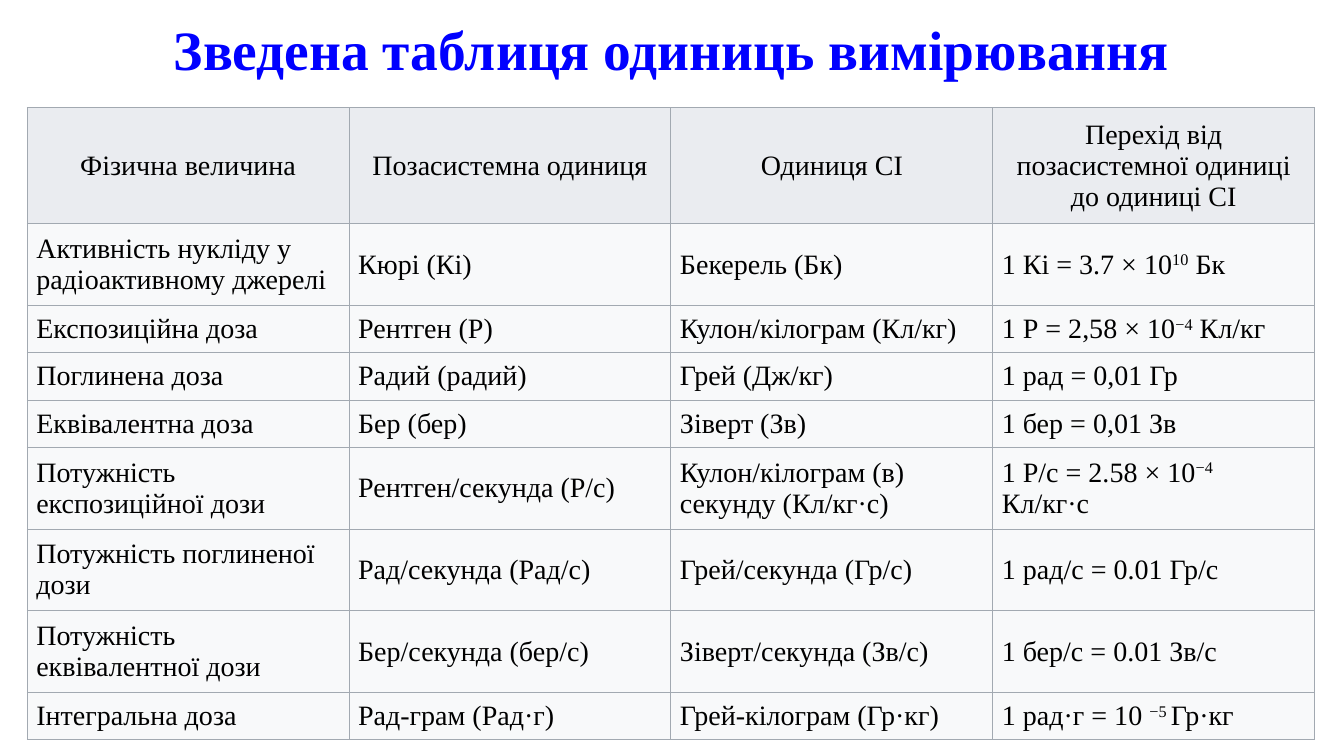
from lxml.etree import SubElement
from pptx import Presentation
from pptx.dml.color import RGBColor
from pptx.enum.text import MSO_ANCHOR as Anchor, PP_ALIGN as Align
from pptx.oxml.ns import qn
from pptx.util import Inches, Pt

TITLE = "Зведена таблиця одиниць вимірювання"
HEADER = ["Фізична величина", "Позасистемна одиниця", "Одиниця СІ",
          "Перехід від позасистемної одиниці до одиниці СІ"]
UNITS = [
    ["Активність нукліду у радіоактивному джерелі", "Кюрі (Кі)",
     "Бекерель (Бк)", "1 Кі = 3.7 × 10^10^ Бк"],
    ["Експозиційна доза", "Рентген (Р)",
     "Кулон/кілограм (Кл/кг)", "1 Р = 2,58 × 10^−4^ Кл/кг"],
    ["Поглинена доза", "Радий (радий)", "Грей (Дж/кг)", "1 рад = 0,01 Гр"],
    ["Еквівалентна доза", "Бер (бер)", "Зіверт (Зв)", "1 бер = 0,01 Зв"],
    ["Потужність експозиційної дози", "Рентген/секунда (Р/с)",
     "Кулон/кілограм (в) секунду (Кл/кг·с)", "1 Р/c = 2.58 × 10^−4^ Кл/кг·с"],
    ["Потужність поглиненої дози", "Рад/секунда (Рад/с)",
     "Грей/секунда (Гр/с)", "1 рад/с = 0.01 Гр/c"],
    ["Потужність еквівалентної дози", "Бер/секунда (бер/с)",
     "Зіверт/секунда (Зв/с)", "1 бер/c = 0.01 Зв/с"],
    ["Інтегральна доза", "Рад-грам (Рад·г)",
     "Грей-кілограм (Гр·кг)", "1 рад·г = 10 ^−5 ^Гр·кг"],
]
ROWS = [HEADER] + UNITS
ROW_LINES = [3, 2, 1, 1, 1, 2, 2, 2, 1]
LINE_H, ROW_PAD = 0.34, 0.13
LEFT, TOP, WIDTH = 0.27, 1.07, 12.77
FONT = "Times New Roman"
MARGINS = {"margin_left": Inches(0.09), "margin_right": Inches(0.09),
           "margin_top": Inches(0.04), "margin_bottom": Inches(0.04)}
TITLE_FONT = {"name": FONT, "size": Pt(39.6), "bold": True}
CELL_FONT = {"name": FONT, "size": Pt(20), "bold": False}


def rgb(value):
    return RGBColor.from_string(value)


def assign(target, values):
    for name, value in values.items():
        setattr(target, name, value)


def write(p, text, font, color):
    for i, part in enumerate(text.split("^")):
        r = p.add_run()
        r.text = part
        assign(r.font, font)
        r.font.color.rgb = rgb(color)
        if i % 2:
            r.font._element.set("baseline", "30000")


def add_borders(cell, color, width):
    tc_pr = cell._tc.get_or_add_tcPr()
    for i, side in enumerate(["lnL", "lnR", "lnT", "lnB"]):
        ln = SubElement(tc_pr, qn("a:" + side), w=str(Pt(width)))
        fill = SubElement(ln, qn("a:solidFill"))
        SubElement(fill, qn("a:srgbClr"), val=color)
        tc_pr.insert(i, ln)


def add_title(s):
    box = s.shapes.add_textbox(Inches(0.91), Inches(0.19), Inches(11.5), Inches(0.67))
    tf = box.text_frame
    assign(tf, {"word_wrap": True, "vertical_anchor": Anchor.MIDDLE, **MARGINS})
    p = tf.paragraphs[0]
    assign(p, {"alignment": Align.CENTER, "line_spacing": 0.9})
    write(p, TITLE, TITLE_FONT, "0000FF")


def add_units(s):
    heights = [ROW_PAD + LINE_H * n for n in ROW_LINES]
    table = s.shapes.add_table(len(ROWS), len(HEADER), Inches(LEFT), Inches(TOP),
                               Inches(WIDTH), Inches(sum(heights))).table
    for row, height in zip(table.rows, heights):
        row.height = Inches(height)
    for i, texts in enumerate(ROWS):
        for j, text in enumerate(texts):
            cell = table.cell(i, j)
            assign(cell, {"vertical_anchor": Anchor.MIDDLE, **MARGINS})
            cell.fill.solid()
            cell.fill.fore_color.rgb = rgb("F8F9FA" if i else "EAECF0")
            add_borders(cell, "A2A9B1", 0.75)
            p = cell.text_frame.paragraphs[0]
            p.alignment = Align.LEFT if i else Align.CENTER
            write(p, text, CELL_FONT, "000000")


def main():
    prs = Presentation()
    assign(prs, {"slide_width": Inches(13.33), "slide_height": Inches(7.5)})
    s = prs.slides.add_slide(prs.slide_layouts[6])
    add_title(s)
    add_units(s)
    prs.save("out.pptx")


if __name__ == "__main__":
    main()
